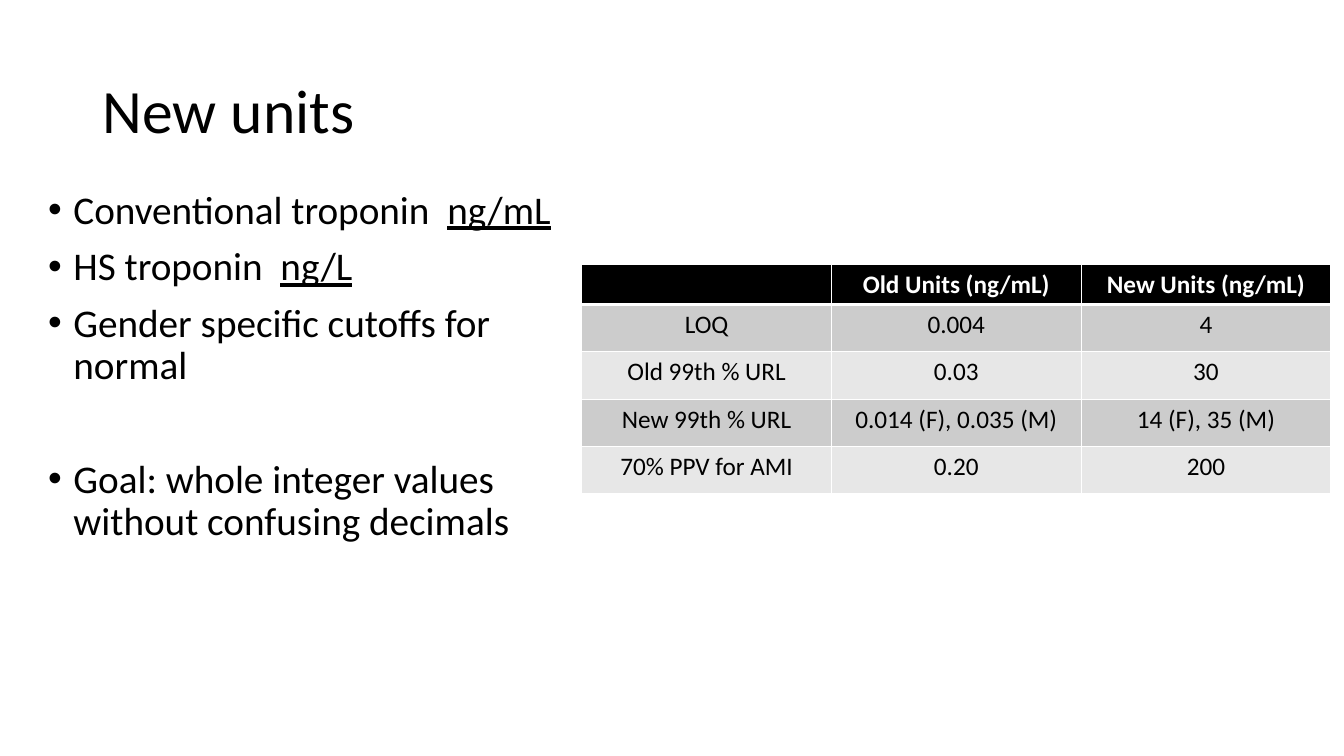
from dataclasses import dataclass

from lxml.etree import SubElement
from pptx import Presentation
from pptx.dml.color import RGBColor
from pptx.enum.text import MSO_ANCHOR as Anchor, PP_ALIGN as Align
from pptx.oxml.ns import qn
from pptx.util import Inches, Pt

FONT = "Calibri"
BLACK, WHITE = "000000", "FFFFFF"
BANDS = ("CCCCCC", "E7E7E7")


@dataclass
class Point:
    text: str
    unit: str = ""
    before: float = 10


POINTS = [
    Point("Conventional troponin  ", "ng/mL"),
    Point("HS troponin  ", "ng/L"),
    Point("Gender specific cutoffs for normal"),
    Point("Goal: whole integer values without confusing decimals", before=51),
]
ROWS = [
    ("", "Old Units (ng/mL)", "New Units (ng/mL)"),
    ("LOQ", "0.004", "4"),
    ("Old 99th % URL", "0.03", "30"),
    ("New 99th % URL", "0.014 (F), 0.035 (M)", "14 (F), 35 (M)"),
    ("70% PPV for AMI", "0.20", "200"),
]


def color(code: str) -> RGBColor:
    return RGBColor.from_string(code)


def style(run, size: float, code: str = BLACK, bold: bool = False) -> None:
    font = run.font
    font.name, font.size, font.bold = FONT, Pt(size), bold
    font.color.rgb = color(code)


def add_frame(slide, left: float, top: float, width: float, height: float):
    box = slide.shapes.add_textbox(Inches(left), Inches(top), Inches(width), Inches(height))
    box.text_frame.word_wrap = True
    return box.text_frame


def add_title(slide, text: str) -> None:
    frame = add_frame(slide, 0.92, 0.4, 11.5, 1.45)
    frame.vertical_anchor = Anchor.MIDDLE
    frame.text = text
    para = frame.paragraphs[0]
    para.line_spacing = 0.9
    style(para.runs[0], 44)


def set_bullet(para) -> None:
    props = para._p.get_or_add_pPr()
    props.set("marL", str(Inches(0.25)))
    props.set("indent", str(Inches(-0.25)))
    SubElement(props, qn("a:buFont"), typeface="Arial")
    SubElement(props, qn("a:buChar"), char="•")


def add_points(slide, points: list[Point]) -> None:
    frame = add_frame(slide, 0.38, 1.84, 5.55, 5.09)
    for i, point in enumerate(points):
        para = frame.add_paragraph() if i else frame.paragraphs[0]
        para.text = point.text
        para.line_spacing, para.space_before = 0.9, Pt(point.before)
        set_bullet(para)
        if point.unit:
            unit = para.add_run()
            unit.text = point.unit
            unit.font.underline = True
        for run in para.runs:
            style(run, 28)


def set_border(cell, side: str, width: float) -> None:
    line = SubElement(cell._tc.get_or_add_tcPr(), qn(f"a:ln{side}"), w=str(Pt(width)))
    SubElement(SubElement(line, qn("a:solidFill")), qn("a:srgbClr"), val=WHITE)


def fill_cell(cell, text: str, row: int) -> None:
    head = row == 0
    widths = {"L": 1, "R": 1, "T": 3 if row == 1 else 1, "B": 3 if head else 1}
    for side, width in widths.items():
        set_border(cell, side, width)
    cell.fill.solid()
    cell.fill.fore_color.rgb = color(BLACK if head else BANDS[(row - 1) % 2])
    cell.text_frame.text = text
    para = cell.text_frame.paragraphs[0]
    para.alignment = Align.CENTER
    para.font.size = Pt(18)
    for run in para.runs:
        style(run, 18, WHITE if head else BLACK, head)


def add_units(slide, rows: list[tuple[str, ...]]) -> None:
    table = slide.shapes.add_table(
        len(rows), len(rows[0]), Inches(5.77), Inches(2.62), Inches(7.43), Inches(2.26)
    ).table
    table.first_row = table.horz_banding = False
    for r, texts in enumerate(rows):
        table.rows[r].height = Inches(0.47 if r else 0.4)
        for c, text in enumerate(texts):
            fill_cell(table.cell(r, c), text, r)


def main() -> None:
    deck = Presentation()
    deck.slide_width, deck.slide_height = Inches(13.33), Inches(7.5)
    slide = deck.slides.add_slide(deck.slide_layouts[6])

    # Title and bullet points
    add_title(slide, "New units")
    add_points(slide, POINTS)

    # Table of old and new units
    add_units(slide, ROWS)

    deck.save("out.pptx")


if __name__ == "__main__":
    main()
